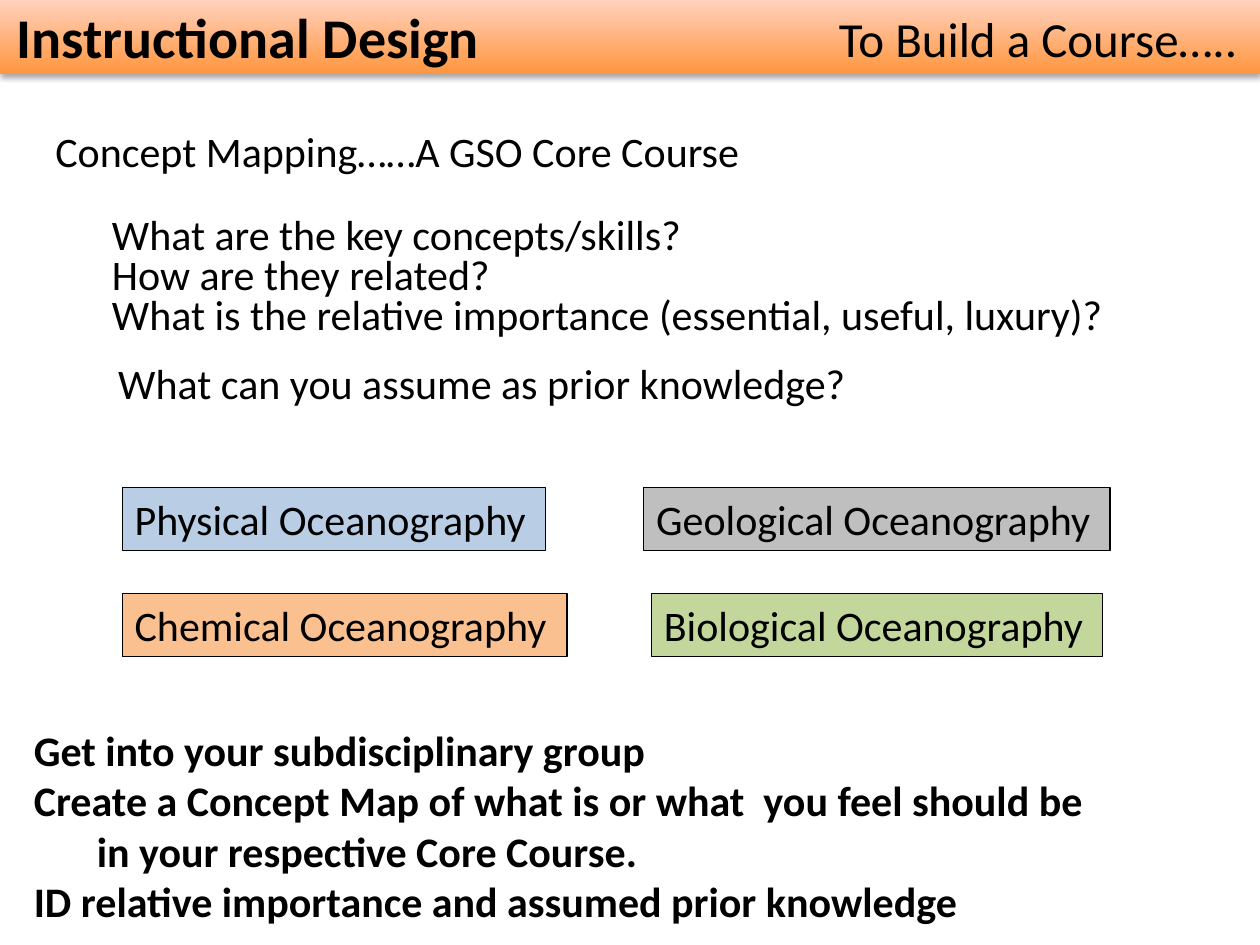
"""Build the Instructional Design concept-mapping slide."""
from dataclasses import dataclass

from lxml import etree
from pptx import Presentation, util as u
from pptx.dml.color import RGBColor
from pptx.enum import shapes, text
from pptx.oxml.ns import qn

COLUMNS, ROWS = 100, 75


@dataclass(frozen=True)
class Theme:
    font: str = "Calibri"
    ink: str = "000000"
    bar_bottom: str = "FF953E"
    bar_top: str = "FFD2BD"
    physical: str = "B9CDE5"
    chemical: str = "FAC090"
    geological: str = "BFBFBF"
    biological: str = "C3D69B"
    title: int = 32
    subtitle: int = 28
    body: int = 24
    outline: float = 0.75


@dataclass(frozen=True)
class Area:
    column: float
    row: float
    columns: float
    rows: float


@dataclass(frozen=True)
class Note:
    area: Area
    words: str
    size: int
    bold: bool = False
    spacing: float = 1.0


@dataclass(frozen=True)
class Discipline:
    name: str
    column: float
    row: float
    columns: float
    fill: str


THEME = Theme()
BOX_ROWS = 5
UPPER_ROW, LOWER_ROW = 38.7, 47.1

TITLE = Note(Area(0.3, -0.3, 39.1, 6.4), "Instructional Design", THEME.title, bold=True)
NOTES = [
    Note(Area(65.6, 0.2, 34.4, 5.7), "To Build a Course…..", THEME.subtitle),
    Note(Area(3.4, 9.5, 57.9, BOX_ROWS), "Concept Mapping……A GSO Core Course", THEME.body),
    Note(Area(7.9, 16.8, 81.7, 10.8),
         "What are the key concepts/skills?\n"
         "How are they related?\n"
         "What is the relative importance (essential, useful, luxury)?",
         THEME.body, spacing=0.8),
    Note(Area(8.4, 27.9, 60.4, BOX_ROWS), "What can you assume as prior knowledge?", THEME.body),
    Note(Area(1.7, 57, 86.4, 17.2),
         "Get into your subdisciplinary group\n"
         "Create a Concept Map of what is or what  you feel should be\n"
         "\tin your respective Core Course.\n"
         "ID relative importance and assumed prior knowledge",
         THEME.body, bold=True),
]
DISCIPLINES = [
    Discipline("Physical", 9.7, UPPER_ROW, 33.6, THEME.physical),
    Discipline("Chemical", 9.7, LOWER_ROW, 35.3, THEME.chemical),
    Discipline("Geological", 51.1, UPPER_ROW, 37, THEME.geological),
    Discipline("Biological", 51.7, LOWER_ROW, 35.8, THEME.biological),
]


def place(area: Area, deck) -> tuple:
    """Convert a grid area to slide lengths."""
    cell_width, cell_height = deck.slide_width / COLUMNS, deck.slide_height / ROWS
    return (round(area.column * cell_width), round(area.row * cell_height),
            round(area.columns * cell_width), round(area.rows * cell_height))


def write(box, note: Note) -> None:
    """Set and format the words of a box."""
    frame = box.text_frame
    frame.text = note.words
    frame.word_wrap = False
    frame.auto_size = text.MSO_AUTO_SIZE.SHAPE_TO_FIT_TEXT
    frame.vertical_anchor = text.MSO_ANCHOR.TOP
    for para in frame.paragraphs:
        para.alignment = text.PP_ALIGN.LEFT
        para.line_spacing = note.spacing
        for span in para.runs:
            span.font.name = THEME.font
            span.font.size = u.Pt(note.size)
            span.font.bold = note.bold
            span.font.color.rgb = RGBColor.from_string(THEME.ink)


def add_rectangle(page, deck, area: Area):
    """Add a rectangle without the default shadow."""
    box = page.shapes.add_shape(shapes.MSO_SHAPE.RECTANGLE, *place(area, deck))
    box.shadow.inherit = False
    return box


def add_bar(page, deck) -> None:
    """Add the shaded header bar behind the title."""
    bar = add_rectangle(page, deck, Area(0, 0, COLUMNS, 5.9))
    bar.line.fill.background()
    bar.fill.gradient()
    bar.fill.gradient_angle = 90
    for stop, color in zip(bar.fill.gradient_stops, (THEME.bar_bottom, THEME.bar_top)):
        stop.color.rgb = RGBColor.from_string(color)
    for position, stop in enumerate(bar.fill.gradient_stops):
        stop.position = position
    effects = bar.element.spPr.find(qn("a:effectLst"))
    shadow = etree.SubElement(effects, qn("a:outerShdw"), blurRad=str(u.Pt(3.1)),
                              dist=str(u.Pt(1.8)), dir="5400000", rotWithShape="0")
    color = etree.SubElement(shadow, qn("a:srgbClr"), val=THEME.ink)
    etree.SubElement(color, qn("a:alpha"), val="35000")
    page.shapes.title.element.addprevious(bar.element)


def add_note(page, deck, note: Note) -> None:
    """Add a plain text box."""
    write(page.shapes.add_textbox(*place(note.area, deck)), note)


def add_discipline(page, deck, item: Discipline) -> None:
    """Add an outlined, coloured discipline label."""
    area = Area(item.column, item.row, item.columns, BOX_ROWS)
    box = add_rectangle(page, deck, area)
    box.fill.solid()
    box.fill.fore_color.rgb = RGBColor.from_string(item.fill)
    box.line.color.rgb = RGBColor.from_string(THEME.ink)
    box.line.width = u.Pt(THEME.outline)
    write(box, Note(area, f"{item.name} Oceanography", THEME.body))


def main() -> None:
    """Build and save the deck."""
    deck = Presentation()
    deck.slide_width, deck.slide_height = u.Inches(10), u.Inches(7.5)
    page = deck.slides.add_slide(deck.slide_layouts[5])
    title = page.shapes.title
    title.left, title.top, title.width, title.height = place(TITLE.area, deck)
    write(title, TITLE)
    add_bar(page, deck)
    for note in NOTES:
        add_note(page, deck, note)
    for item in DISCIPLINES:
        add_discipline(page, deck, item)
    deck.save("out.pptx")


if __name__ == "__main__":
    main()
